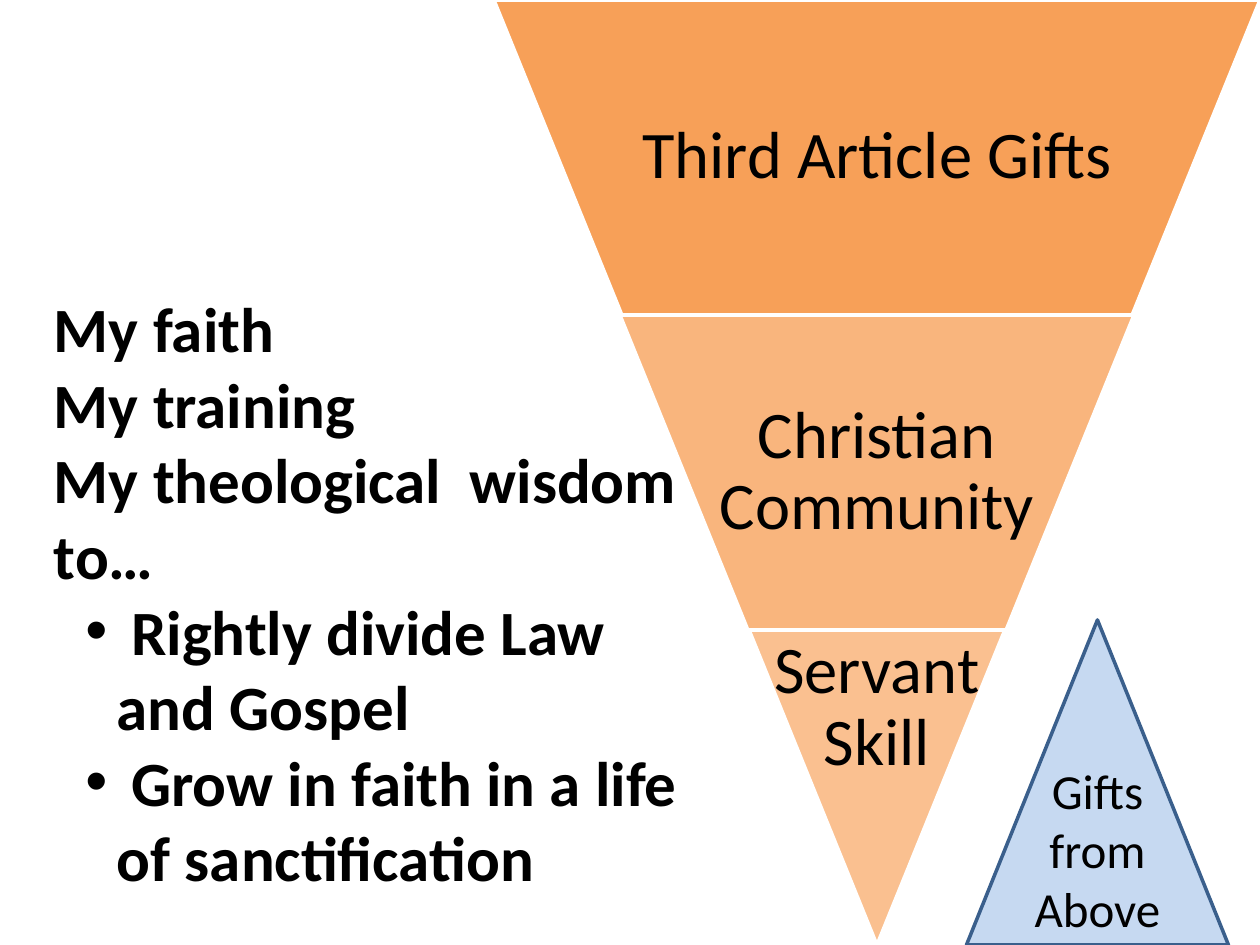
from dataclasses import dataclass

from lxml.etree import SubElement
from pptx import Presentation
from pptx.dml.color import RGBColor
from pptx.enum.shapes import MSO_SHAPE as Preset
from pptx.enum.text import MSO_ANCHOR as Anchor, MSO_AUTO_SIZE as AutoSize, PP_ALIGN as Align
from pptx.oxml.ns import qn
from pptx.util import Inches, Pt

ORANGE = RGBColor(0xF7, 0x96, 0x46)
PEACH = RGBColor(0xFA, 0xC0, 0x90)
PALE_BLUE = RGBColor(0xC6, 0xD9, 0xF1)
BLUE = RGBColor(0x3A, 0x5F, 0x8C)
WHITE = RGBColor(0xFF, 0xFF, 0xFF)
BLACK = RGBColor(0, 0, 0)

TIER_HEIGHT = 2.5
CENTER = 6.96


@dataclass
class Tier:
    label: str
    width: float
    text_width: float
    inset: float
    color: RGBColor
    opacity: int
    anchor: Anchor


@dataclass
class Line:
    text: str
    bulleted: bool = False


TIERS = [
    Tier("Third Article Gifts", 6.08, 3.95, 0.406, ORANGE, 90, Anchor.MIDDLE),
    Tier("Christian Community", 4.08, 2.65, 0.406, ORANGE, 70, Anchor.MIDDLE),
    Tier("Servant Skill", 2.03, 2.03, 0.5, PEACH, 100, Anchor.TOP),
]

LINES = [
    Line("My faith"),
    Line("My training"),
    Line("My theological  wisdom to…"),
    Line(" Rightly divide Law and Gospel", bulleted=True),
    Line(" Grow in faith in a life of sanctification", bulleted=True),
]


def add_outlined_shape(page, preset: Preset, place: tuple, fill: RGBColor,
                       line: RGBColor, adjustment: float, opacity: int = 100):
    shape = page.shapes.add_shape(preset, *map(Inches, place))
    shape.shadow.inherit = False
    shape.adjustments[0] = adjustment
    shape.fill.solid()
    shape.fill.fore_color.rgb = fill
    shape.line.color.rgb = line
    shape.line.width = Pt(2)
    if opacity < 100:
        color = shape._element.spPr.find(qn("a:solidFill"))[0]
        SubElement(color, qn("a:alpha"), val=str(opacity * 1000))
    return shape


def add_text_frame(page, place: tuple, **settings):
    frame = page.shapes.add_textbox(*map(Inches, place)).text_frame
    for name, value in ({"word_wrap": True} | settings).items():
        setattr(frame, name, value)
    return frame


def write(para, text: str, size: int, bold: bool = False) -> None:
    span = para.add_run()
    span.text = text
    style = {"name": "Calibri", "size": Pt(size), "bold": bold}
    for name, value in style.items():
        setattr(span.font, name, value)
    span.font.color.rgb = BLACK


def add_bullet(para) -> None:
    para.level = 1
    properties = para._p.get_or_add_pPr()
    properties.set("marL", str(Inches(0.5)))
    properties.set("indent", str(Inches(-0.25)))
    SubElement(properties, qn("a:buFont"), typeface="Arial")
    SubElement(properties, qn("a:buChar"), char="•")


def add_tier(page, tier: Tier, top: float) -> None:
    def centered(width: float) -> tuple:
        return CENTER - width / 2, top, width, TIER_HEIGHT

    band = add_outlined_shape(page, Preset.TRAPEZOID, centered(tier.width),
                              tier.color, WHITE, tier.inset, tier.opacity)
    band.rotation = 180
    margins = {f"margin_{side}": Inches(0.05) for side in ("left", "top", "right", "bottom")}
    frame = add_text_frame(page, centered(tier.text_width),
                           vertical_anchor=tier.anchor, **margins)
    para = frame.paragraphs[0]
    para.alignment = Align.CENTER
    para.line_spacing = 0.9
    write(para, tier.label, 38)


def add_gifts_triangle(page) -> None:
    add_outlined_shape(page, Preset.ISOSCELES_TRIANGLE, (7.67, 4.92, 2.08, 2.58),
                       PALE_BLUE, BLUE, 0.5)
    frame = add_text_frame(page, (7.92, 5.99, 1.58, 1.51),
                           auto_size=AutoSize.SHAPE_TO_FIT_TEXT)
    para = frame.paragraphs[0]
    para.alignment = Align.CENTER
    write(para, "Gifts from Above", 28)


def add_statement(page) -> None:
    frame = add_text_frame(page, (0.33, 2.25, 5.17, 4.95),
                           auto_size=AutoSize.SHAPE_TO_FIT_TEXT)
    for index, line in enumerate(LINES):
        para = frame.add_paragraph() if index else frame.paragraphs[0]
        if line.bulleted:
            add_bullet(para)
        write(para, line.text, 36, bold=True)


def main() -> None:
    deck = Presentation()
    deck.slide_width, deck.slide_height = Inches(10), Inches(7.5)
    page = deck.slides.add_slide(deck.slide_layouts.get_by_name("Blank"))
    for index, tier in enumerate(TIERS):
        add_tier(page, tier, index * TIER_HEIGHT)
    add_gifts_triangle(page)
    add_statement(page)
    deck.save("out.pptx")


if __name__ == "__main__":
    main()
